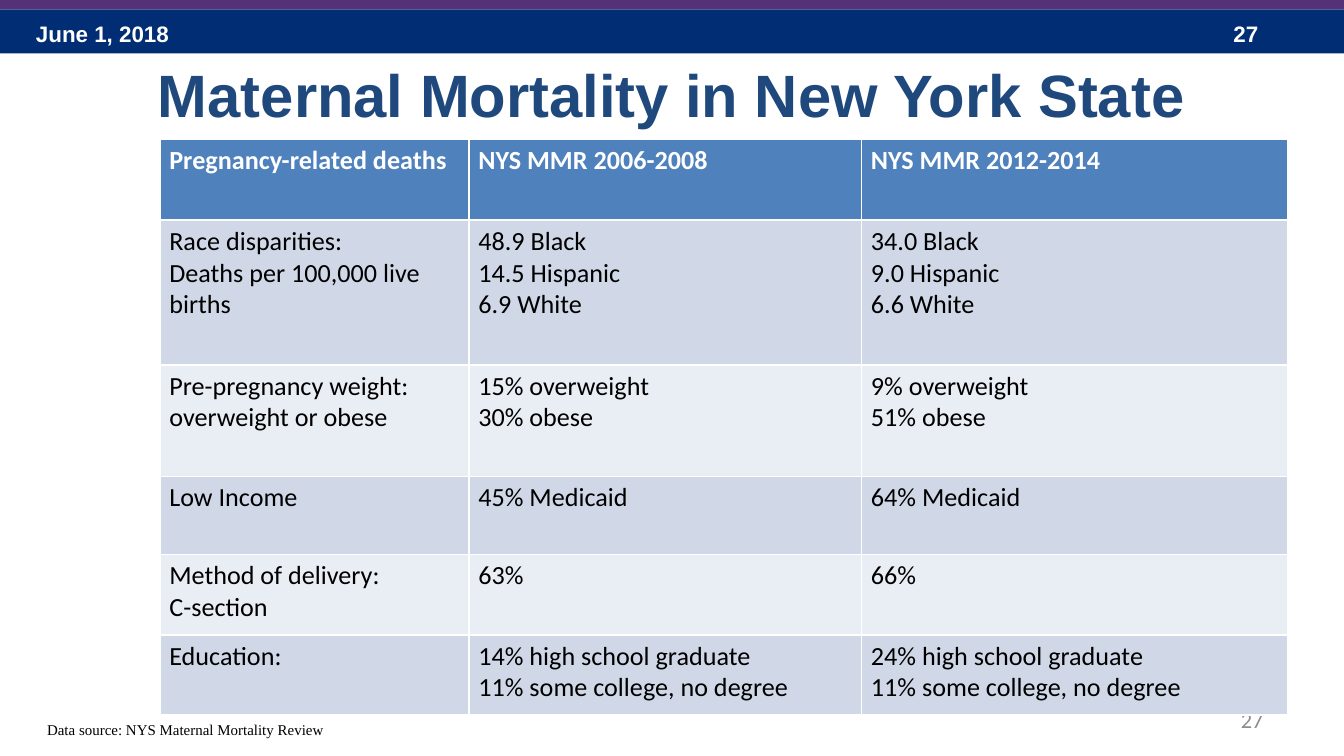
from pptx import Presentation
from pptx.dml.color import RGBColor
from pptx.enum.shapes import MSO_SHAPE
from pptx.enum.text import MSO_ANCHOR, PP_ALIGN
from pptx.util import Cm, Pt

COLORS = {
    "navy": "002D73",
    "purple": "553278",
    "title": "1F497D",
    "header": "4F81BD",
    "odd": "D0D8E8",
    "even": "E9EDF4",
    "white": "FFFFFF",
    "black": "000000",
    "gray": "8C8C8C",
}
COLUMN_WIDTHS = [5.84, 7.42, 8.05]
ROW_HEIGHTS = [1.52, 2.74, 2.11, 1.47, 1.52, 1.52]
ROWS = [
    ["Pregnancy-related deaths", "NYS MMR 2006-2008", "NYS MMR 2012-2014"],
    [
        "Race disparities:\nDeaths per 100,000 live births",
        "48.9 Black\n14.5 Hispanic\n6.9 White",
        "34.0 Black\n9.0 Hispanic\n6.6 White",
    ],
    [
        "Pre-pregnancy weight: overweight or obese",
        "15% overweight\n30% obese",
        "9% overweight\n51% obese",
    ],
    ["Low Income", "45% Medicaid", "64% Medicaid"],
    ["Method of delivery:\nC-section", "63%", "66%"],
    [
        "Education:",
        "14% high school graduate\n11% some college, no degree",
        "24% high school graduate\n11% some college, no degree",
    ],
]


class SlideBuilder:
    """Hold the style and the current slide, and add elements to it."""

    def __init__(self, slide, colors):
        self.slide = slide
        self.colors = colors

    def color(self, name):
        return RGBColor.from_string(self.colors[name])

    def format_text(self, text_frame, font, size, color, bold=False, align=PP_ALIGN.LEFT):
        for paragraph in text_frame.paragraphs:
            paragraph.alignment = align
            for run in paragraph.runs:
                run.font.name = font
                run.font.size = Pt(size)
                run.font.bold = bold
                run.font.color.rgb = self.color(color)

    def band(self, top, height, color):
        shape = self.slide.shapes.add_shape(
            MSO_SHAPE.RECTANGLE, Cm(0), Cm(top), Cm(25.4), Cm(height)
        )
        shape.shadow.inherit = False
        shape.fill.solid()
        shape.fill.fore_color.rgb = self.color(color)
        shape.line.fill.background()

    def text(self, box, content, font, size, color, bold=False,
             align=PP_ALIGN.LEFT, anchor=MSO_ANCHOR.TOP, wrap=True):
        shape = self.slide.shapes.add_textbox(*[Cm(length) for length in box])
        text_frame = shape.text_frame
        text_frame.word_wrap = wrap
        text_frame.vertical_anchor = anchor
        text_frame.text = content
        self.format_text(text_frame, font, size, color, bold, align)

    def table(self, left, top, widths, heights, rows):
        table = self.slide.shapes.add_table(
            len(rows), len(widths), Cm(left), Cm(top), Cm(sum(widths)), Cm(sum(heights))
        ).table
        for column, width in zip(table.columns, widths):
            column.width = Cm(width)
        for row, height in zip(table.rows, heights):
            row.height = Cm(height)
        for row_index, row in enumerate(rows):
            is_header = row_index == 0
            fill = "header" if is_header else "odd" if row_index % 2 else "even"
            for column_index, content in enumerate(row):
                cell = table.cell(row_index, column_index)
                cell.margin_left = cell.margin_right = Cm(0.18)
                cell.margin_top = cell.margin_bottom = Cm(0.1)
                cell.fill.solid()
                cell.fill.fore_color.rgb = self.color(fill)
                cell.text_frame.text = content
                self.format_text(
                    cell.text_frame, "Calibri", 14,
                    "white" if is_header else "black", is_header,
                )


def main():
    presentation = Presentation()
    presentation.slide_width = Cm(25.4)
    presentation.slide_height = Cm(14.29)
    slide = presentation.slides.add_slide(presentation.slide_layouts[6])
    builder = SlideBuilder(slide, COLORS)

    builder.band(0.18, 0.83, "navy")
    builder.text((0.43, 0.25, 5.92, 0.76), "June 1, 2018", "Arial", 12, "white", True)
    builder.text((23.06, 0.25, 1.9, 0.76), "27", "Arial", 12, "white", True)
    builder.band(-0.05, 0.23, "purple")
    builder.text(
        (1.27, 0.58, 22.86, 2.39), "Maternal Mortality in New York State",
        "Arial", 32, "title", True, PP_ALIGN.CENTER, MSO_ANCHOR.MIDDLE,
    )
    builder.text(
        (18.21, 13.23, 5.92, 0.76), "27", "Calibri", 12, "gray",
        align=PP_ALIGN.RIGHT, anchor=MSO_ANCHOR.MIDDLE,
    )
    builder.table(3.02, 2.64, COLUMN_WIDTHS, ROW_HEIGHTS, ROWS)
    builder.text(
        (0.64, 13.49, 5.77, 0.61), "Data source: NYS Maternal Mortality Review",
        "Times New Roman", 8, "black", wrap=False,
    )
    presentation.save("out.pptx")


if __name__ == "__main__":
    main()
